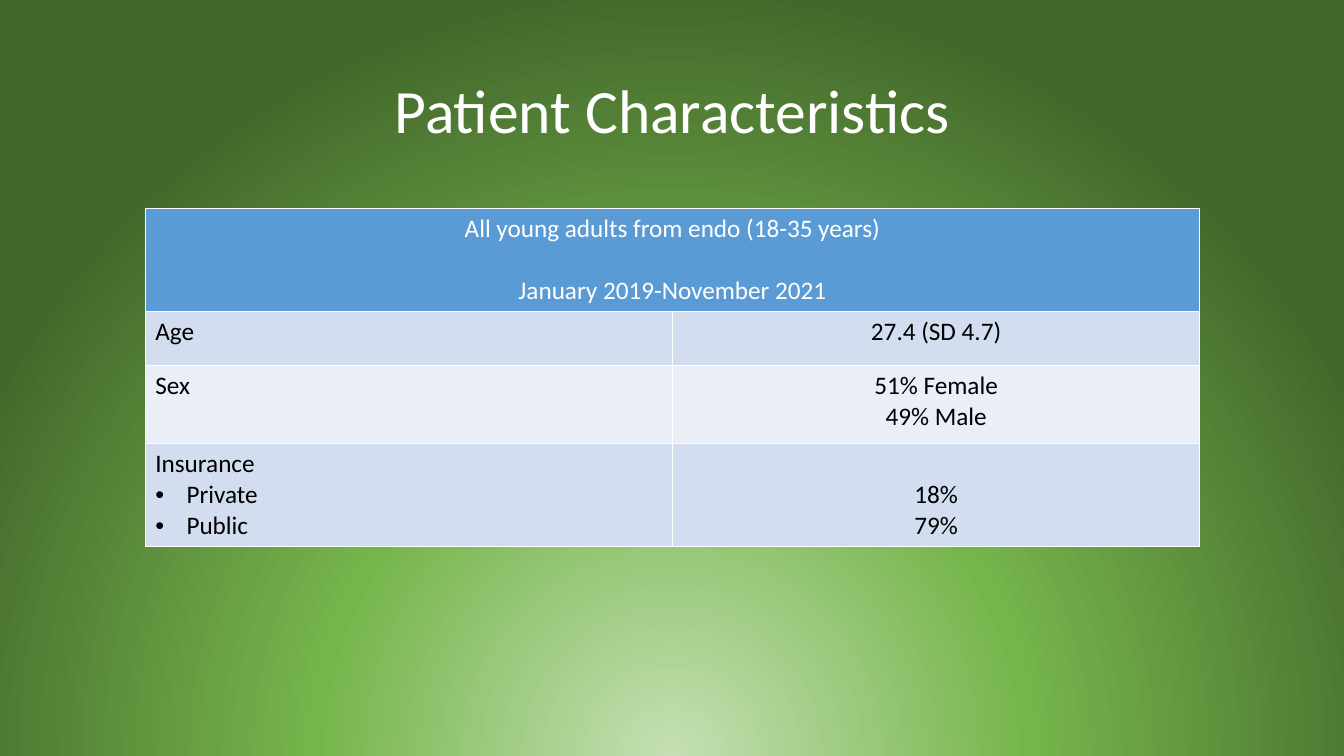
from lxml import etree
from pptx import Presentation
from pptx.dml.color import RGBColor
from pptx.enum.text import MSO_ANCHOR, PP_ALIGN
from pptx.oxml import parse_xml
from pptx.oxml.ns import nsdecls, qn
from pptx.util import Inches, Pt

LEFT, CENTER = PP_ALIGN.LEFT, PP_ALIGN.CENTER
TOP, MIDDLE, BOTTOM = MSO_ANCHOR.TOP, MSO_ANCHOR.MIDDLE, MSO_ANCHOR.BOTTOM

WHITE = RGBColor(0xFF, 0xFF, 0xFF)
BLACK = RGBColor(0x00, 0x00, 0x00)
HEADER_BLUE = RGBColor(0x5B, 0x9B, 0xD5)
BAND_DARK = RGBColor(0xD2, 0xDE, 0xEF)
BAND_LIGHT = RGBColor(0xEA, 0xEF, 0xF7)
GLOW_STOPS = [(0, RGBColor(0xC5, 0xE0, 0xB4)),
              (46, RGBColor(0x76, 0xB5, 0x4C)),
              (100, RGBColor(0x43, 0x68, 0x2B))]
LINE_HEIGHT = Pt(22)


def write_lines(frame, lines, size=18, color=BLACK, align=LEFT, gap=0, bulleted=False):
    """Write one paragraph per line; gap and bullets apply after the first line."""
    for index, line in enumerate(lines):
        para = frame.paragraphs[0] if index == 0 else frame.add_paragraph()
        para.alignment = align
        span = para.add_run()
        span.text = line
        span.font.name = "Calibri"
        span.font.size = Pt(size)
        span.font.bold = False
        span.font.color.rgb = color
        if index and gap:
            para.space_before = gap
        if index and bulleted:
            properties = para._p.get_or_add_pPr()
            properties.set("marL", str(Inches(0.31)))
            properties.set("indent", str(-Inches(0.31)))
            etree.SubElement(properties, qn("a:buFont")).set("typeface", "Arial")
            etree.SubElement(properties, qn("a:buChar")).set("char", "•")


def style_cell(cell, fill, anchor=TOP):
    """Fill the cell and give it thin white borders."""
    cell.vertical_anchor = anchor
    properties = cell._tc.get_or_add_tcPr()
    for side in ("lnL", "lnR", "lnT", "lnB"):
        properties.append(parse_xml(
            f'<a:{side} {nsdecls("a")} w="{Pt(1)}"><a:solidFill>'
            f'<a:srgbClr val="{WHITE}"/></a:solidFill></a:{side}>'))
    cell.fill.solid()
    cell.fill.fore_color.rgb = fill


deck = Presentation()
deck.slide_width, deck.slide_height = Inches(13.33), Inches(7.5)
page = deck.slides.add_slide(deck.slide_layouts[5])

# Radial glow centred below the bottom edge
page.background.fill.gradient()
gradient = page.background._cSld.find(".//" + qn("a:gradFill"))
stops = "".join(f'<a:gs pos="{percent * 1000}"><a:srgbClr val="{color}"/></a:gs>'
                for percent, color in GLOW_STOPS)
gradient.getparent().replace(gradient, parse_xml(
    f'<a:gradFill {nsdecls("a")} rotWithShape="1"><a:gsLst>{stops}</a:gsLst>'
    '<a:path path="circle"><a:fillToRect l="50000" t="130000" r="50000" b="-30000"/>'
    '</a:path></a:gradFill>'))

title = page.shapes.title
title.left, title.top = Inches(0.92), Inches(0.4)
title.width, title.height = Inches(11.5), Inches(1.45)
title.text_frame.vertical_anchor = MIDDLE
write_lines(title.text_frame, ["Patient Characteristics"], size=44, color=WHITE, align=CENTER)
title.text_frame.paragraphs[0].line_spacing = 0.9

# Patient table: a merged header above label and value columns
row_heights = [1.02, 0.54, 0.77, 1.02]
patients = page.shapes.add_table(len(row_heights), 2, Inches(1.44), Inches(2.07),
                                 Inches(10.46), Inches(sum(row_heights))).table
for row, height in zip(patients.rows, row_heights):
    row.height = Inches(height)

for cell in patients.rows[0].cells:
    style_cell(cell, HEADER_BLUE)
header = patients.cell(0, 0)
header.merge(patients.cell(0, 1))
write_lines(header.text_frame,
            ["All young adults from endo (18-35 years)", "January 2019-November 2021"],
            color=WHITE, align=CENTER, gap=LINE_HEIGHT)

characteristics = [
    (["Age"], ["27.4 (SD 4.7)"], BAND_DARK, TOP),
    (["Sex"], ["51% Female", "49% Male"], BAND_LIGHT, TOP),
    (["Insurance", "Private", "Public"], ["18%", "79%"], BAND_DARK, BOTTOM),
]
for index, (labels, values, band, value_anchor) in enumerate(characteristics, start=1):
    label_cell, value_cell = patients.cell(index, 0), patients.cell(index, 1)
    style_cell(label_cell, band)
    style_cell(value_cell, band, value_anchor)
    write_lines(label_cell.text_frame, labels, bulleted=True)
    write_lines(value_cell.text_frame, values, align=CENTER)

deck.save("out.pptx")
